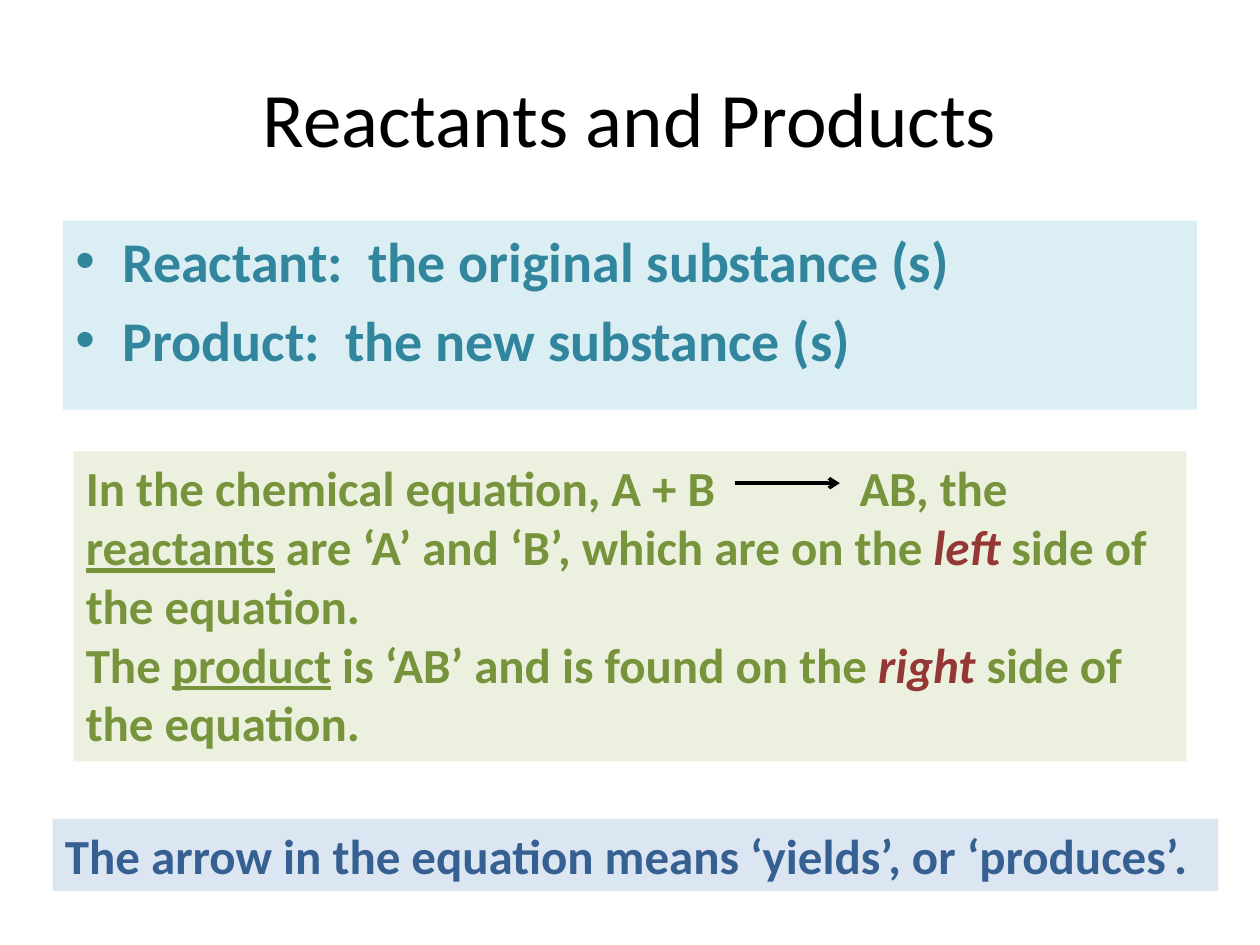
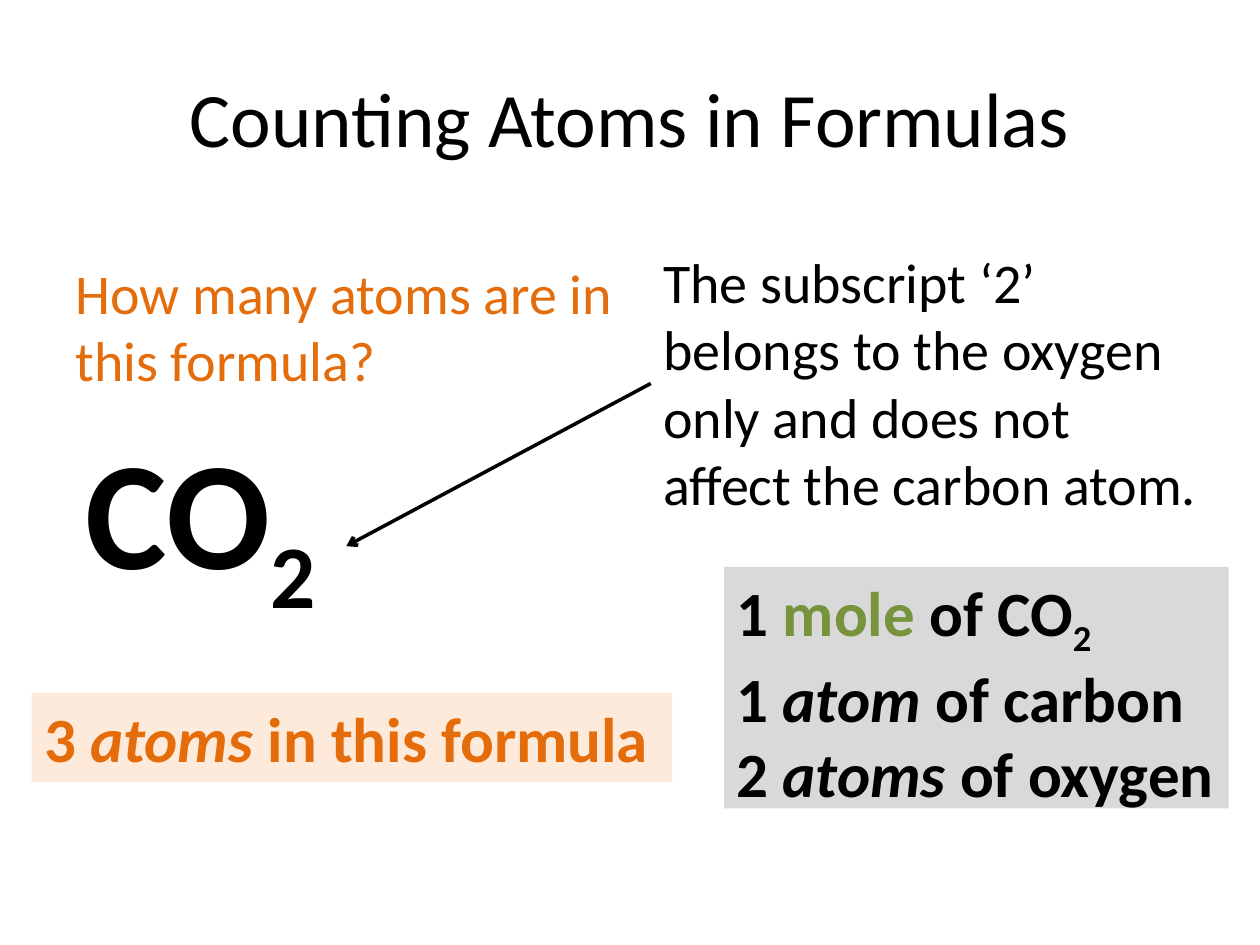
from dataclasses import dataclass

from lxml.etree import SubElement
from pptx import Presentation
from pptx.dml.color import RGBColor
from pptx.enum.shapes import MSO_CONNECTOR
from pptx.enum.text import MSO_ANCHOR, PP_ALIGN
from pptx.oxml.ns import qn
from pptx.util import Cm, Pt


@dataclass(frozen=True)
class Theme:
    font: str = "Calibri"
    ink: str = "000000"
    teal: str = "31859C"
    pale_teal: str = "DBEEF4"
    green: str = "77933C"
    pale_green: str = "EBF1DE"
    red: str = "953735"
    blue: str = "376092"
    pale_blue: str = "DCE6F2"
    orange: str = "E46C0A"
    pale_orange: str = "FDEADA"
    grey: str = "D9D9D9"
    title: int = 44
    body: int = 32
    detail: int = 28
    count: int = 36
    formula: int = 88
    bullet_spacing: float = 6.4
    arrow_width: int = 2


@dataclass(frozen=True)
class Box:
    left: float
    top: float
    width: float
    height: float

    def inside(self, dx, dy, width, height):
        return Box(self.left + dx, self.top + dy, width, height)


THEME = Theme()
PAGE = Box(0, 0, 25.4, 19.05)
TITLE = PAGE.inside(1.27, 0.76, 22.86, 3.18)
UNDERLINED = {"underline": True}
ITALIC = {"italic": True}
SIDE = {"italic": True, "color": THEME.red}
SUBSCRIPT = {"baseline": -25000}


def add_bullet(paragraph):
    properties = paragraph._p.get_or_add_pPr()
    properties.set("marL", str(Cm(0.95)))
    properties.set("indent", str(-Cm(0.95)))
    SubElement(properties, qn("a:buFont"), typeface="Arial")
    SubElement(properties, qn("a:buChar"), char="•")


def add_tab_stop(paragraph, position):
    stops = SubElement(paragraph._p.get_or_add_pPr(), qn("a:tabLst"))
    SubElement(stops, qn("a:tab"), pos=str(Cm(position)), algn="l")


def add_run(paragraph, words, size, color, bold, italic=False, underline=False, baseline=0):
    run = paragraph.add_run()
    run.text = words
    font = run.font
    font.name, font.size = THEME.font, Pt(size)
    font.bold, font.italic, font.underline = bold, italic, underline
    font.color.rgb = RGBColor.from_string(color)
    if baseline:
        font._element.set("baseline", str(baseline))


def add_text(slide, box, paragraphs, size, color=THEME.ink, bold=False, fill=None,
             align=PP_ALIGN.LEFT, anchor=MSO_ANCHOR.TOP, bullets=False, tab=None):
    panel = slide.shapes.add_textbox(Cm(box.left), Cm(box.top), Cm(box.width), Cm(box.height))
    if fill:
        panel.fill.solid()
        panel.fill.fore_color.rgb = RGBColor.from_string(fill)
    frame = panel.text_frame
    frame.word_wrap = True
    frame.vertical_anchor = anchor
    for index, pieces in enumerate(paragraphs):
        paragraph = frame.add_paragraph() if index else frame.paragraphs[0]
        paragraph.alignment = align
        if bullets:
            if index:
                paragraph.space_before = Pt(THEME.bullet_spacing)
            add_bullet(paragraph)
        if tab and not index:
            add_tab_stop(paragraph, tab)
        for piece in pieces:
            words, changes = (piece, {}) if isinstance(piece, str) else piece
            add_run(paragraph, words, **{"size": size, "color": color, "bold": bold, **changes})


def add_arrow(slide, box, start, end):
    arrow = slide.shapes.add_connector(
        MSO_CONNECTOR.STRAIGHT,
        Cm(box.left + start[0]), Cm(box.top + start[1]),
        Cm(box.left + end[0]), Cm(box.top + end[1]))
    arrow.line.width = Pt(THEME.arrow_width)
    arrow.line.color.rgb = RGBColor.from_string(THEME.ink)
    SubElement(arrow.line._get_or_add_ln(), qn("a:tailEnd"), type="arrow")
    SubElement(arrow._element.spPr, qn("a:effectLst"))


def add_titled_slide(deck, title):
    slide = deck.slides.add_slide(deck.slide_layouts[6])
    add_text(slide, TITLE, [[title]], size=THEME.title,
             align=PP_ALIGN.CENTER, anchor=MSO_ANCHOR.MIDDLE)
    return slide


def add_definitions(slide, box):
    add_text(slide, box,
             [["Reactant:  the original substance (s)"], ["Product:  the new substance (s)"]],
             size=THEME.body, color=THEME.teal, bold=True, fill=THEME.pale_teal, bullets=True)


def add_equation(slide, box):
    add_text(slide, box, [
        ["In the chemical equation, A + B\tAB, the ", ("reactants", UNDERLINED),
         " are ‘A’ and ‘B’, which are on the ", ("left", SIDE), " side of the equation."],
        ["The ", ("product", UNDERLINED), " is ‘AB’ and is found on the ",
         ("right", SIDE), " side of the equation."],
    ], size=THEME.detail, color=THEME.green, bold=True, fill=THEME.pale_green, tab=15.6)
    add_arrow(slide, box, (13.34, 0.64), (15.45, 0.64))


def add_arrow_meaning(slide, box):
    add_text(slide, box, [["The arrow in the equation means ‘yields’, or ‘produces’."]],
             size=THEME.detail, color=THEME.blue, bold=True, fill=THEME.pale_blue)


def add_formula_question(slide, box):
    add_text(slide, box.inside(0.21, 3.39, 6.99, 4.02), [["CO", ("2", SUBSCRIPT)]],
             size=THEME.formula, bold=True)
    add_text(slide, box.inside(0, 0.21, 11.85, 3), [["How many atoms are in this formula?"]],
             size=THEME.body, color=THEME.orange)
    add_text(slide, box.inside(11.85, 0, 11.43, 5.74),
             [["The subscript ‘2’ belongs to the oxygen only and does not affect the carbon atom."]],
             size=THEME.body)
    add_arrow(slide, box, (11.85, 2.86), (5.71, 6.14))


def add_mole_breakdown(slide, box):
    add_text(slide, box, [
        ["1 ", ("mole", {"color": THEME.green}), " of CO", ("2", SUBSCRIPT)],
        ["1 ", ("atom", ITALIC), " of carbon"],
        ["2 ", ("atoms", ITALIC), " of oxygen"],
    ], size=THEME.count, bold=True, fill=THEME.grey)


def add_atom_total(slide, box):
    add_text(slide, box, [["3 ", ("atoms", ITALIC), " in this formula"]],
             size=THEME.count, color=THEME.orange, bold=True, fill=THEME.pale_orange)


def build_reactants_slide(deck, page):
    slide = add_titled_slide(deck, "Reactants and Products")
    add_definitions(slide, page.inside(1.27, 4.45, 22.86, 3.81))
    add_equation(slide, page.inside(1.48, 9.1, 22.44, 6.25))
    add_arrow_meaning(slide, page.inside(1.06, 16.51, 23.5, 1.45))


def build_counting_slide(deck, page):
    slide = add_titled_slide(deck, "Counting Atoms in Formulas")
    add_formula_question(slide, page.inside(1.27, 4.87, 23.28, 7.41))
    add_mole_breakdown(slide, page.inside(14.6, 11.43, 10.17, 4.87))
    add_atom_total(slide, page.inside(0.64, 13.97, 12.91, 1.8))


def main():
    deck = Presentation()
    deck.slide_width, deck.slide_height = Cm(PAGE.width), Cm(PAGE.height)
    build_reactants_slide(deck, PAGE)
    build_counting_slide(deck, PAGE)
    deck.save("out.pptx")


if __name__ == "__main__":
    main()
